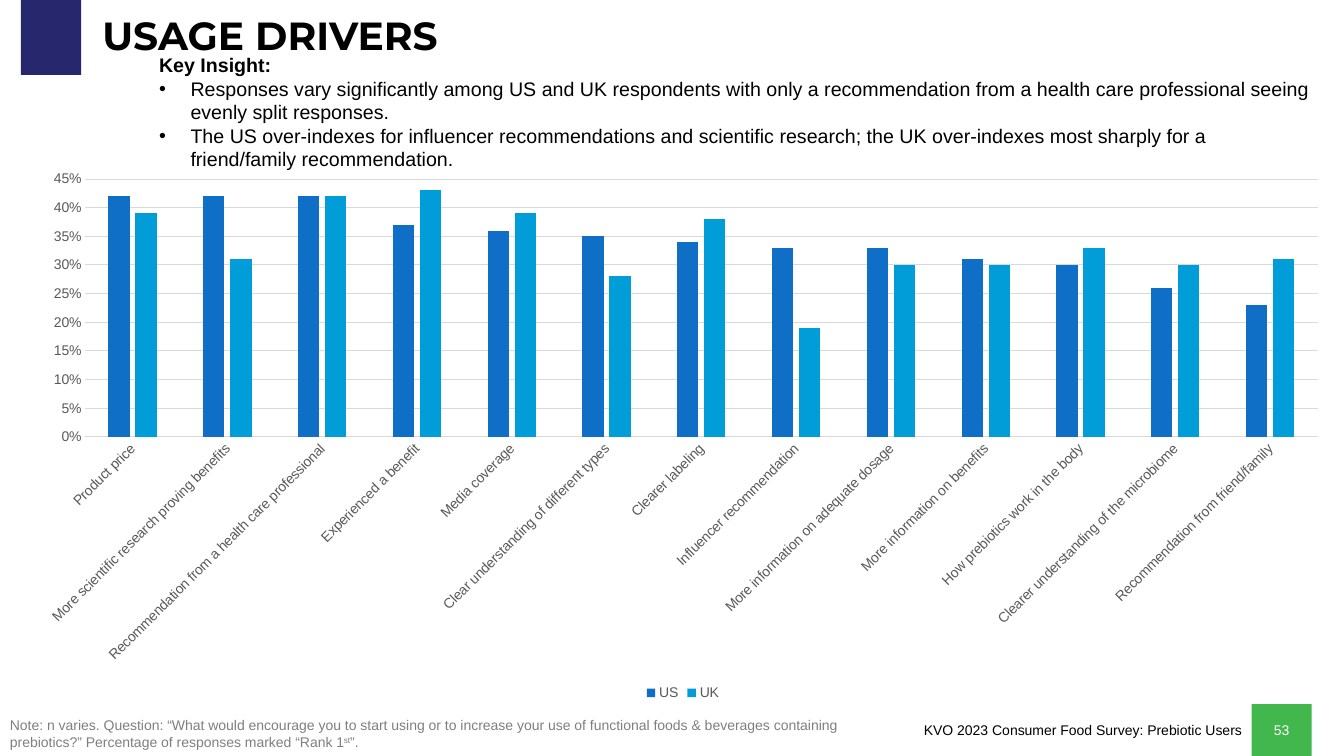
from pptx import Presentation
from pptx.chart.data import CategoryChartData
from pptx.dml.color import RGBColor
from pptx.enum.chart import XL_CHART_TYPE, XL_LEGEND_POSITION, XL_TICK_MARK
from pptx.enum.shapes import MSO_SHAPE
from pptx.enum.text import MSO_ANCHOR, PP_ALIGN
from pptx.oxml.ns import qn
from pptx.util import Pt
from lxml import etree

BARS = XL_CHART_TYPE.COLUMN_CLUSTERED
BOTTOM = XL_LEGEND_POSITION.BOTTOM
NO_TICK = XL_TICK_MARK.NONE
RECT = MSO_SHAPE.RECTANGLE
MIDDLE = MSO_ANCHOR.MIDDLE
LEFT, CENTER, RIGHT = PP_ALIGN.LEFT, PP_ALIGN.CENTER, PP_ALIGN.RIGHT

COLORS = {
    "navy": "27276E", "green": "42B74D", "black": "000000",
    "white": "FFFFFF", "note": "7F7F7F", "label": "595959",
    "grid": "D9D9D9", "US": "0F6FC6", "UK": "009DD9",
}


def style(font, size, color, bold=False, face="Arial"):
    font.size, font.bold, font.name = Pt(size), bold, face
    font.color.rgb = RGBColor.from_string(COLORS[color])


def add_box(text, place, size, color, bold=False, face="Arial", align=LEFT, fill=None):
    """Add a text box, or a filled rectangle when fill is given."""
    area = [Pt(n) for n in place]
    if fill:
        box = slide.shapes.add_shape(RECT, *area)
        box.shadow.inherit = False
        box.fill.solid()
        box.fill.fore_color.rgb = RGBColor.from_string(COLORS[fill])
        box.line.fill.background()
    else:
        box = slide.shapes.add_textbox(*area)
    frame = box.text_frame
    frame.word_wrap = True
    frame.text = text
    for para in frame.paragraphs:
        para.alignment = align
        for run in para.runs:
            style(run.font, size, color, bold, face)
    return frame


deck = Presentation()
deck.slide_width, deck.slide_height = Pt(960), Pt(540)
slide = deck.slides.add_slide(deck.slide_layouts[6])

# Header and footer
add_box("", (15, 0, 43, 53.5), 10, "white", fill="navy")
add_box("KVO 2023 Consumer Food Survey: Prebiotic Users",
        (570, 512, 324, 19.5), 10, "black", align=RIGHT)
page = add_box("53", (894, 503, 43, 37), 10, "white", align=CENTER, fill="green")
page.vertical_anchor = MIDDLE
title = add_box("USAGE DRIVERS", (66, 9, 828, 36), 28, "black", True, "Montserrat")
title.vertical_anchor = MIDDLE
title.paragraphs[0].line_spacing = 0.9

# Key insight
points = [
    "Key Insight:",
    "Responses vary significantly among US and UK respondents with only a "
    "recommendation from a health care professional seeing evenly split responses.",
    "The US over-indexes for influencer recommendations and scientific research; "
    "the UK over-indexes most sharply for a friend/family recommendation.",
]
insight = add_box("\n".join(points), (106.5, 34.5, 838, 143), 14, "black")
head, *bullets = insight.paragraphs
head.runs[0].font.bold = True
for para in bullets:
    props = para._p.get_or_add_pPr()
    props.set("marL", str(Pt(22.5)))
    props.set("indent", str(-Pt(22.5)))
    etree.SubElement(props, qn("a:buFont")).set("typeface", "Arial")
    etree.SubElement(props, qn("a:buChar")).set("char", "•")

# Note
note = add_box(
    "Note: n varies. Question: “What would encourage you to start using or to "
    "increase your use of functional foods & beverages containing prebiotics?” "
    "Percentage of responses marked “Rank 1", (0, 508.5, 648, 31.5), 10, "note")
for text, lift in (("st", "30000"), ("”.", "0")):
    run = note.paragraphs[0].add_run()
    run.text = text
    style(run.font, 10, "note")
    run._r.get_or_add_rPr().set("baseline", lift)

# Chart
drivers = [
    ("Product price", 0.42, 0.39),
    ("More scientific research proving benefits", 0.42, 0.31),
    ("Recommendation from a health care professional", 0.42, 0.42),
    ("Experienced a benefit", 0.37, 0.43),
    ("Media coverage", 0.36, 0.39),
    ("Clear understanding of different types", 0.35, 0.28),
    ("Clearer labeling", 0.34, 0.38),
    ("Influencer recommendation", 0.33, 0.19),
    ("More information on adequate dosage", 0.33, 0.3),
    ("More information on benefits", 0.31, 0.3),
    ("How prebiotics work in the body", 0.3, 0.33),
    ("Clearer understanding of the microbiome", 0.26, 0.3),
    ("Recommendation from friend/family", 0.23, 0.31),
]
names, us, uk = zip(*drivers)
data = CategoryChartData(number_format="0%")
data.categories = names
data.add_series("US", us)
data.add_series("UK", uk)
chart = slide.shapes.add_chart(BARS, Pt(15.5), Pt(114.5), Pt(944.5), Pt(389), data).chart
style(chart.font, 10, "black")
chart.has_title = False
chart.has_legend = True
chart.legend.position = BOTTOM
chart.legend.include_in_layout = False
style(chart.legend.font, 10, "label")

plot = chart.plots[0]
plot.gap_width, plot.overlap = 219, -27
plot.vary_by_categories = False
for series in plot.series:
    series.format.fill.solid()
    series.format.fill.fore_color.rgb = RGBColor.from_string(COLORS[series.name])

base, scale = chart.category_axis, chart.value_axis
for axis in (base, scale):
    axis.major_tick_mark = axis.minor_tick_mark = NO_TICK
    style(axis.tick_labels.font, 10, "label")
scale.minimum_scale, scale.maximum_scale, scale.major_unit = 0, 0.45, 0.05
scale.tick_labels.number_format = "0%"
scale.tick_labels.number_format_is_linked = False
scale.format.line.fill.background()
for line in (base.format.line, scale.major_gridlines.format.line):
    line.width = Pt(0.75)
    line.color.rgb = RGBColor.from_string(COLORS["grid"])
turn = base._element.find(qn("c:txPr")).find(qn("a:bodyPr"))
turn.set("rot", str(-45 * 60000))

deck.save("out.pptx")
